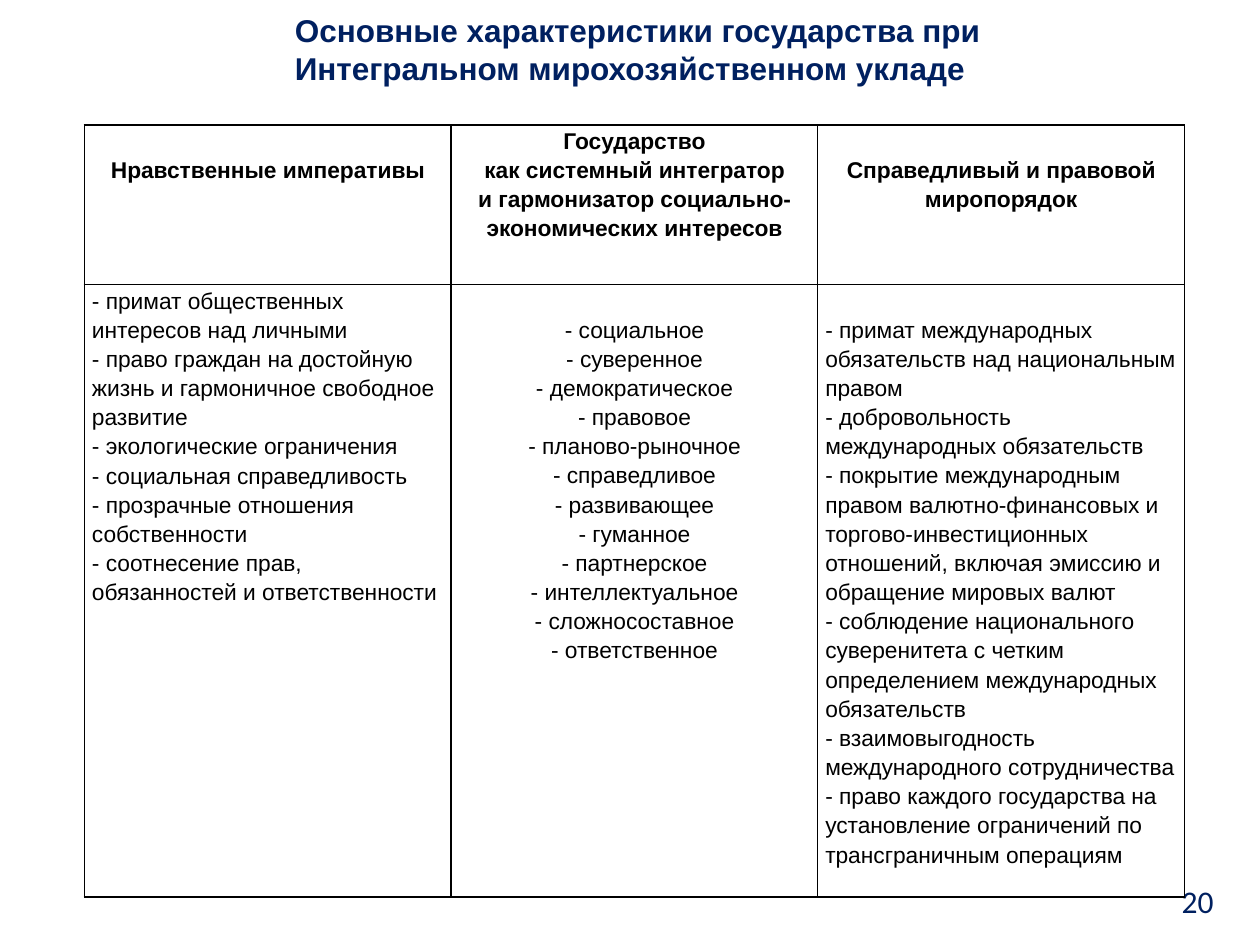
from lxml import etree
from pptx import Presentation
from pptx.dml.color import RGBColor
from pptx.enum.text import MSO_ANCHOR, MSO_AUTO_SIZE, PP_ALIGN
from pptx.oxml.ns import qn
from pptx.util import Inches, Pt

LEFT, CENTER, RIGHT = PP_ALIGN.LEFT, PP_ALIGN.CENTER, PP_ALIGN.RIGHT
MIDDLE, TOP = MSO_ANCHOR.MIDDLE, MSO_ANCHOR.TOP
NO_FIT = MSO_AUTO_SIZE.NONE

COLORS = {"navy": "002060", "black": "000000"}
TITLE = "Основные характеристики государства при Интегральном мирохозяйственном укладе"
PAGE_NUMBER = "20"

# Each column: header lines, list items, list alignment,
# and the number of text lines skipped above the header and the list
COLUMNS = [
    {
        "header": ["Нравственные императивы"],
        "items": [
            "примат общественных интересов над личными",
            "право граждан на достойную жизнь и гармоничное свободное развитие",
            "экологические ограничения",
            "социальная справедливость",
            "прозрачные отношения собственности",
            "соотнесение прав, обязанностей и ответственности",
        ],
        "align": LEFT,
        "skips": (1, 0),
    },
    {
        "header": [
            "Государство",
            "как системный интегратор",
            "и гармонизатор социально-экономических интересов",
        ],
        "items": [
            "социальное", "суверенное", "демократическое", "правовое",
            "планово-рыночное", "справедливое", "развивающее", "гуманное",
            "партнерское", "интеллектуальное", "сложносоставное", "ответственное",
        ],
        "align": CENTER,
        "skips": (0, 1),
    },
    {
        "header": ["Справедливый и правовой миропорядок"],
        "items": [
            "примат международных обязательств над национальным правом",
            "добровольность международных обязательств",
            "покрытие международным правом валютно-финансовых и "
            "торгово-инвестиционных отношений, включая эмиссию и обращение мировых валют",
            "соблюдение национального суверенитета с четким определением "
            "международных обязательств",
            "взаимовыгодность международного сотрудничества",
            "право каждого государства на установление ограничений по "
            "трансграничным операциям",
        ],
        "align": LEFT,
        "skips": (1, 1),
    },
]

COLUMN_WIDTH = 2.91
ROW_HEIGHTS = [1.27, 4.86]
LINE_HEIGHT = 0.23
TITLE_FONT = {"name": "Arial", "size": Pt(18), "bold": True}
NUMBER_FONT = {"name": "Calibri", "size": Pt(18), "bold": False}
HEADER_FONT = {"name": "Arial", "size": Pt(13), "bold": True}
ITEM_FONT = {**HEADER_FONT, "bold": False}


def write(frame, lines, font, color, align, spacing=None):
    for index, line in enumerate(lines):
        para = frame.paragraphs[0] if index == 0 else frame.add_paragraph()
        para.alignment = align
        para.line_spacing = spacing
        span = para.add_run()
        span.text = line
        for name, value in font.items():
            setattr(span.font, name, value)
        span.font.color.rgb = RGBColor.from_string(COLORS[color])


def add_borders(cell):
    properties = cell._tc.get_or_add_tcPr()
    for side in ("lnL", "lnR", "lnT", "lnB"):
        line = etree.SubElement(properties, qn(f"a:{side}"), w=str(Pt(1)))
        fill = etree.SubElement(line, qn("a:solidFill"))
        etree.SubElement(fill, qn("a:srgbClr"), val=COLORS["black"])


def fill_cell(cell, lines, font, align, skipped_lines):
    add_borders(cell)
    cell.fill.background()
    cell.vertical_anchor = TOP
    cell.margin_left = cell.margin_right = Inches(0.06)
    cell.margin_top = Inches(skipped_lines * LINE_HEIGHT)
    cell.margin_bottom = 0
    write(cell.text_frame, lines, font, "black", align, 1.15)


def set_frame(frame):
    frame.word_wrap = True
    frame.auto_size = NO_FIT
    frame.vertical_anchor = MIDDLE


def add_title(page):
    title = page.shapes.title
    title.left, title.top = Inches(2.24), Inches(0.05)
    title.width, title.height = Inches(6.61), Inches(0.68)
    set_frame(title.text_frame)
    write(title.text_frame, [TITLE], TITLE_FONT, "navy", LEFT)


def add_page_number(page):
    box = page.shapes.add_textbox(Inches(7.17), Inches(6.95), Inches(2.56), Inches(0.4))
    set_frame(box.text_frame)
    write(box.text_frame, [PAGE_NUMBER], NUMBER_FONT, "navy", RIGHT)


def add_characteristics(page):
    table = page.shapes.add_table(
        len(ROW_HEIGHTS), len(COLUMNS), Inches(0.67), Inches(0.99),
        Inches(COLUMN_WIDTH * len(COLUMNS)), Inches(sum(ROW_HEIGHTS)),
    ).table
    table.first_row = table.horz_banding = False
    for row, height in zip(table.rows, ROW_HEIGHTS):
        row.height = Inches(height)
    for index, column in enumerate(COLUMNS):
        table.columns[index].width = Inches(COLUMN_WIDTH)
        header_skip, item_skip = column["skips"]
        items = [f"- {item}" for item in column["items"]]
        fill_cell(table.cell(0, index), column["header"], HEADER_FONT, CENTER, header_skip)
        fill_cell(table.cell(1, index), items, ITEM_FONT, column["align"], item_skip)


def main():
    deck = Presentation()
    deck.slide_width, deck.slide_height = Inches(10), Inches(7.5)
    page = deck.slides.add_slide(deck.slide_layouts[5])
    add_title(page)
    add_page_number(page)
    add_characteristics(page)
    deck.save("out.pptx")


if __name__ == "__main__":
    main()
